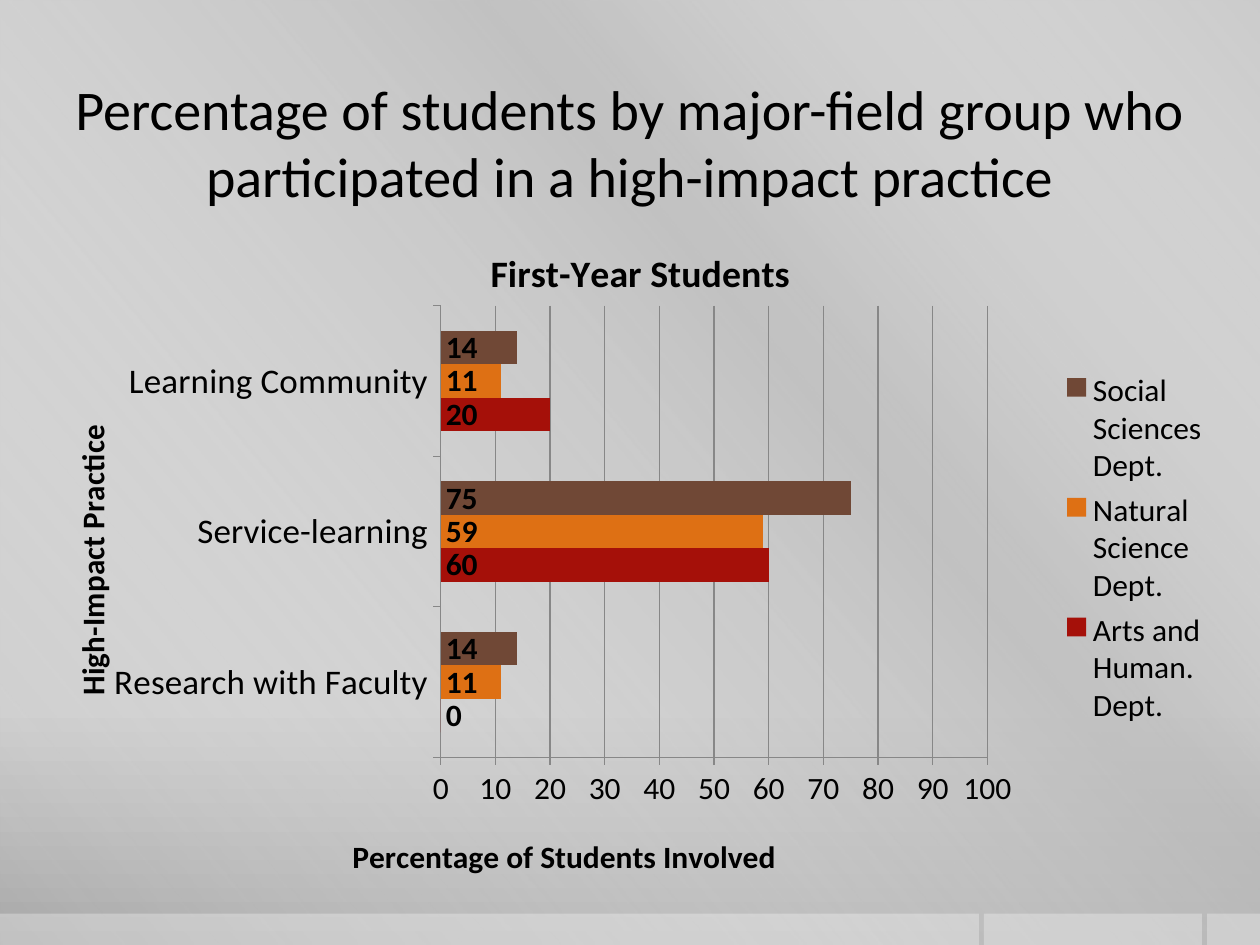
from typing import NamedTuple, Optional

from lxml import etree
from pptx import Presentation
from pptx.chart.data import CategoryChartData
from pptx.dml.color import RGBColor
from pptx.enum.chart import XL_CHART_TYPE, XL_LABEL_POSITION, XL_LEGEND_POSITION, XL_TICK_MARK
from pptx.enum.shapes import MSO_SHAPE
from pptx.enum.text import MSO_ANCHOR, PP_ALIGN
from pptx.oxml import parse_xml
from pptx.oxml.ns import nsdecls, qn
from pptx.util import Emu, Pt

RECTANGLE = MSO_SHAPE.RECTANGLE
CENTER = PP_ALIGN.CENTER
MIDDLE = MSO_ANCHOR.MIDDLE
BAR_CLUSTERED = XL_CHART_TYPE.BAR_CLUSTERED
INSIDE_BASE = XL_LABEL_POSITION.INSIDE_BASE
LEGEND_RIGHT = XL_LEGEND_POSITION.RIGHT
TICK_OUTSIDE = XL_TICK_MARK.OUTSIDE

PX_PER_INCH = 100
FONT = "Calibri"
BLACK = RGBColor(0x00, 0x00, 0x00)
WHITE = RGBColor(0xFF, 0xFF, 0xFF)
LIGHT = RGBColor(0xCB, 0xCB, 0xCB)
MEDIUM = RGBColor(0xC8, 0xC8, 0xC8)
DARK = RGBColor(0xA7, 0xA7, 0xA7)
SHEEN = RGBColor(0xBF, 0xBF, 0xBF)
GRID = RGBColor(0x87, 0x87, 0x87)
RED = RGBColor(0xA5, 0x10, 0x09)
ORANGE = RGBColor(0xDE, 0x70, 0x14)
BROWN = RGBColor(0x70, 0x48, 0x36)


class Box(NamedTuple):
    left: int
    top: int
    width: int
    height: int


class Stop(NamedTuple):
    position: int
    color: RGBColor
    opacity: int = 100


class Department(NamedTuple):
    name: str
    values: tuple[int, ...]
    color: RGBColor


class Layout(NamedTuple):
    x: float
    y: float
    w: Optional[float] = None
    h: Optional[float] = None


SLIDE = Box(0, 0, 1000, 750)
TITLE = Box(50, 50, 900, 125)
CHART = Box(42, 175, 933, 528)
FOOTER_BARS = [Box(958, 725, 42, 25), Box(781, 725, 173, 25), Box(0, 725, 777, 25)]
BACKGROUND_STOPS = [Stop(0, LIGHT), Stop(76, MEDIUM), Stop(100, DARK)]
SHEEN_STOPS = [Stop(0, WHITE, 0), Stop(34, SHEEN, 61), Stop(38, SHEEN, 76), Stop(100, WHITE, 0)]
PRACTICES = ["Research with Faculty", "Service-learning", "Learning Community"]
DEPARTMENTS = [
    Department("Arts and Human. Dept.", (0, 60, 20), RED),
    Department("Natural Science Dept.", (11, 59, 11), ORANGE),
    Department("Social Sciences Dept.", (14, 75, 14), BROWN),
]


def px(value: int) -> Emu:
    return Emu(value * 914400 // PX_PER_INCH)


def place(box: Box) -> tuple[Emu, ...]:
    return tuple(px(value) for value in box)


def format_font(font, size: float, bold: bool = False) -> None:
    font.name, font.size, font.bold = FONT, Pt(size), bold
    font.color.rgb = BLACK


def write_text(text_frame, text: str, *, size: float, bold: bool = False) -> None:
    paragraph = text_frame.paragraphs[0]
    paragraph.alignment = CENTER
    run = paragraph.add_run()
    run.text = text
    format_font(run.font, size, bold)


def set_gradient(properties, stops: list[Stop], angle: int) -> None:
    """Replace the solid fill of a properties element with a linear gradient."""
    stop_xml = "".join(
        f'<a:gs pos="{stop.position * 1000}"><a:srgbClr val="{stop.color}">'
        f'<a:alpha val="{stop.opacity * 1000}"/></a:srgbClr></a:gs>'
        for stop in stops
    )
    gradient = parse_xml(
        f'<a:gradFill {nsdecls("a")} rotWithShape="1"><a:gsLst>{stop_xml}</a:gsLst>'
        f'<a:lin ang="{angle * 60000}" scaled="0"/></a:gradFill>'
    )
    properties.replace(properties.find(qn("a:solidFill")), gradient)


def add_rectangle(slide, box: Box):
    shape = slide.shapes.add_shape(RECTANGLE, *place(box))
    shape.shadow.inherit = False
    shape.fill.solid()
    shape.fill.fore_color.rgb = WHITE
    shape.line.fill.background()
    return shape


def add_footer_bar(slide, box: Box) -> None:
    shape = add_rectangle(slide, box)
    color = shape.element.spPr.find(qn("a:solidFill"))[0]
    etree.SubElement(color, qn("a:alpha"), val="30000")


def set_layout(parent, layout: Layout, after: Optional[str] = None) -> None:
    """Fix a chart part, as fractions of the chart, after the named child."""
    for old in parent.findall(qn("c:layout")):
        parent.remove(old)
    element = etree.Element(qn("c:layout"))
    manual = etree.SubElement(element, qn("c:manualLayout"))
    if after is None:
        etree.SubElement(manual, qn("c:layoutTarget"), val="inner")
    for mode in ("xMode", "yMode"):
        etree.SubElement(manual, qn(f"c:{mode}"), val="edge")
    for name, value in layout._asdict().items():
        if value is not None:
            etree.SubElement(manual, qn(f"c:{name}"), val=str(value))
    if after is None:
        parent.insert(0, element)
    else:
        parent.find(qn(after)).addnext(element)


def format_axis(axis, title: str, size: int, rotation: int, layout: Layout) -> None:
    axis.major_tick_mark = TICK_OUTSIDE
    axis.format.line.color.rgb = GRID
    format_font(axis.tick_labels.font, size)
    frame = axis.axis_title.text_frame
    write_text(frame, title, size=18, bold=True)
    body = axis.axis_title.element.find(".//" + qn("a:bodyPr"))
    body.set("rot", str(rotation * 60000))
    body.set("vert", "horz")
    set_layout(axis.axis_title.element, layout, "c:tx")


def add_practice_chart(slide) -> None:
    data = CategoryChartData(number_format="0")
    data.categories = PRACTICES
    for department in DEPARTMENTS:
        data.add_series(department.name, department.values)
    chart = slide.shapes.add_chart(BAR_CLUSTERED, *place(CHART), data).chart
    format_font(chart.font, 18)
    chart.has_title = True
    write_text(chart.chart_title.text_frame, "First-Year Students", size=21.6, bold=True)
    chart.chart_title.include_in_layout = False

    plot = chart.plots[0]
    plot.gap_width, plot.overlap, plot.vary_by_categories = 150, 0, False
    for series, department in zip(plot.series, DEPARTMENTS):
        series.format.fill.solid()
        series.format.fill.fore_color.rgb = department.color
        labels = series.data_labels
        labels.show_value = True
        labels.position = INSIDE_BASE
        format_font(labels.font, 18, bold=True)

    format_axis(chart.category_axis, "High-Impact Practice", 20, -90, Layout(0.01, 0.31))
    value_axis = chart.value_axis
    format_axis(value_axis, "Percentage of Students Involved", 18, 0, Layout(0.25, 0.93))
    value_axis.minimum_scale, value_axis.maximum_scale, value_axis.major_unit = 0, 100, 10
    value_axis.has_major_gridlines = True
    value_axis.major_gridlines.format.line.color.rgb = GRID

    chart.has_legend = True
    chart.legend.position = LEGEND_RIGHT
    chart.legend.include_in_layout = False
    format_font(chart.legend.font, 18)
    chart_element = chart.element.find(qn("c:chart"))
    set_layout(chart_element.find(qn("c:legend")), Layout(0.85, 0.22, 0.14, 0.56), "c:legendPos")
    set_layout(chart_element.find(qn("c:plotArea")), Layout(0.33, 0.13, 0.465, 0.69))


def main() -> None:
    presentation = Presentation()
    presentation.slide_width, presentation.slide_height = px(SLIDE.width), px(SLIDE.height)
    slide = presentation.slides.add_slide(presentation.slide_layouts[5])
    slide.background.fill.solid()
    slide.background.fill.fore_color.rgb = LIGHT
    set_gradient(slide.element.find(".//" + qn("p:bgPr")), BACKGROUND_STOPS, 90)
    set_gradient(add_rectangle(slide, SLIDE).element.spPr, SHEEN_STOPS, 140)
    for bar in FOOTER_BARS:
        add_footer_bar(slide, bar)

    title = slide.shapes.title
    title.left, title.top, title.width, title.height = place(TITLE)
    frame = title.text_frame
    frame.word_wrap, frame.vertical_anchor = True, MIDDLE
    frame.margin_left = frame.margin_right = 0
    frame.margin_top = frame.margin_bottom = px(5)
    write_text(frame, "Percentage of students by major-field group who participated in a "
               "high-impact practice", size=32)
    slide.shapes.element.append(title.element)  # brings the title in front of the backdrop
    add_practice_chart(slide)
    presentation.save("out.pptx")


if __name__ == "__main__":
    main()
